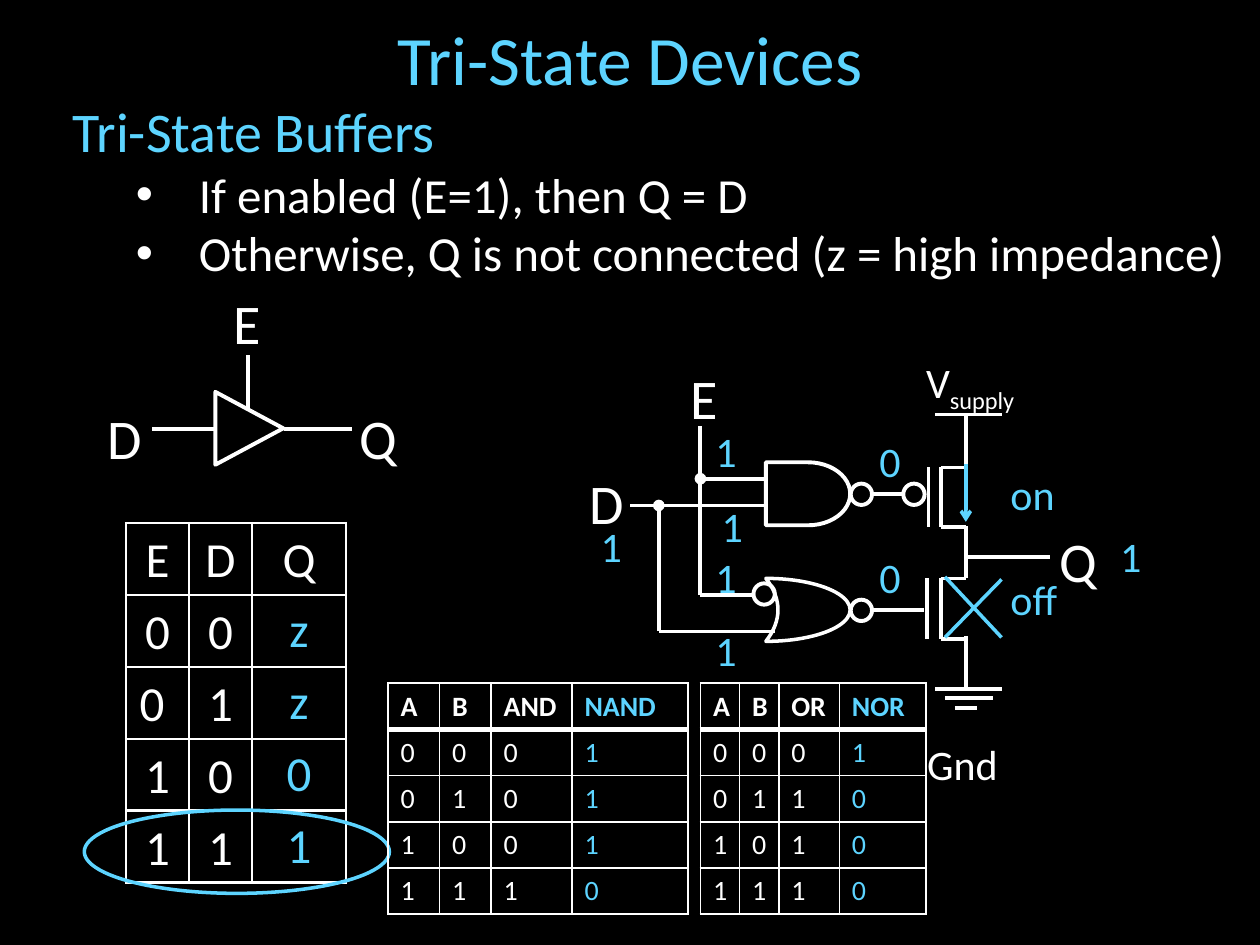
from lxml.etree import SubElement
from pptx import Presentation
from pptx.dml.color import RGBColor
from pptx.enum.shapes import MSO_CONNECTOR, MSO_SHAPE as Preset
from pptx.enum.text import MSO_ANCHOR as Anchor, MSO_AUTO_SIZE as AutoSize, PP_ALIGN as Align
from pptx.oxml.ns import qn
from pptx.util import Cm, Pt

COLORS = {"ground": "000000", "ink": "FFFFFF", "accent": "5DD4FF"}
FONT = "Calibri"
TRUNK_X, TAP_X, GATE_X, OUTPUT_X, DRAIN_X = 14.12, 13.28, 15.44, 17.15, 19.47
D_Y = 10.19


def rgb(color):
    """Look up a named colour."""
    return RGBColor.from_string(COLORS[color])


def style_text(paragraph, size, color="ink", bold=False):
    """Format every run of a paragraph."""
    for run in paragraph.runs:
        run.font.name = FONT
        run.font.size = Pt(size)
        run.font.bold = bold
        run.font.color.rgb = rgb(color)


def add_wire(slide, start, end, color="ink", weight=2.25, head=None, tail=None):
    """Draw a straight line between two points, with optional line ends."""
    points = [Cm(value) for value in (*start, *end)]
    wire = slide.shapes.add_connector(MSO_CONNECTOR.STRAIGHT, *points)
    wire.line.color.rgb = rgb(color)
    wire.line.width = Pt(weight)
    for tag, kind in (("a:headEnd", head), ("a:tailEnd", tail)):
        if kind:
            SubElement(wire.line._get_or_add_ln(), qn(tag), type=kind)
    SubElement(wire._element.spPr, qn("a:effectLst"))


def add_outline(slide, preset, box, color="ink", weight=2.25):
    """Draw an unfilled preset shape."""
    outline = slide.shapes.add_shape(preset, *(Cm(value) for value in box))
    outline.shadow.inherit = False
    outline.fill.background()
    outline.line.color.rgb = rgb(color)
    outline.line.width = Pt(weight)
    return outline


def add_label(slide, text, box, size=24, color="ink", wrap=False):
    """Place a one-line label and return its paragraph."""
    frame = slide.shapes.add_textbox(*(Cm(value) for value in box)).text_frame
    frame.word_wrap = wrap
    frame.auto_size = AutoSize.SHAPE_TO_FIT_TEXT
    frame.text = text
    style_text(frame.paragraphs[0], size, color)
    return frame.paragraphs[0]


def border_cell(cell, weights):
    """Give a cell its left, right, top and bottom borders and no fill."""
    properties = cell._tc.get_or_add_tcPr()
    for side, weight in zip("LRTB", weights):
        edge = SubElement(properties, qn(f"a:ln{side}"), w=str(int(Pt(weight))))
        fill = SubElement(edge, qn("a:solidFill"))
        SubElement(fill, qn("a:srgbClr"), val=COLORS["ink"])
    cell.fill.background()


def add_grid(slide, rows, left, top, widths, row_height):
    """Add a plain table and return its cells as (row, column, cell)."""
    table = slide.shapes.add_table(
        len(rows), len(widths), Cm(left), Cm(top),
        Cm(sum(widths)), Cm(row_height * len(rows))).table
    table.first_row = table.horz_banding = False
    for column, width in zip(table.columns, widths):
        column.width = Cm(width)
    cells = []
    for r, values in enumerate(rows):
        table.rows[r].height = Cm(row_height)
        for c, value in enumerate(values):
            cell = table.cell(r, c)
            cell.text_frame.text = value
            cells.append((r, c, cell))
    return cells


def add_buffer_table(slide):
    """Add the truth table of the tri-state buffer."""
    rows = [("E", "D", "Q"), ("0", "0", "z"), ("0 ", "1", "z"), "100", "111"]
    for r, c, cell in add_grid(slide, rows, 2.54, 10.54, (1.27, 1.27, 1.9), 1.45):
        border_cell(cell, [1.42] * 4)
        cell.vertical_anchor = Anchor.MIDDLE
        paragraph = cell.text_frame.paragraphs[0]
        paragraph.alignment = Align.CENTER
        is_result = r > 0 and c == 2
        style_text(paragraph, 28, "accent" if is_result else "ink")
        if not is_result:
            cell.margin_top = Cm(0.2)
            paragraph.line_spacing = 0.93
            paragraph.space_before = Pt(7)


def add_gate_table(slide, rows, left, widths):
    """Add the truth table of a gate and its negation."""
    for r, c, cell in add_grid(slide, rows, left, 13.77, widths, 0.93):
        border_cell(cell, (1, 1, 3 if r == 1 else 1, 3 if r == 0 else 1))
        style_text(cell.text_frame.paragraphs[0], 16,
                   "accent" if c == 3 else "ink", bold=r == 0)


def add_transistor(slide, gate_x, top, bottom):
    """Draw a transistor: gate plate, channel and the two contacts."""
    channel_x = 18.97
    for x in (gate_x, channel_x):
        add_wire(slide, (x, bottom), (x, top), weight=2)
    for y in (top, bottom):
        add_wire(slide, (channel_x, y), (DRAIN_X, y), weight=2)


def add_heading(slide):
    """Fill the title and the list below it."""
    title = slide.shapes.title
    title.left, title.top, title.width, title.height = map(Cm, (0.64, 0.43, 24.13, 1.47))
    title.text_frame.text = "Tri-State Devices"
    title.text_frame.vertical_anchor = Anchor.MIDDLE
    title.text_frame.paragraphs[0].alignment = Align.CENTER
    style_text(title.text_frame.paragraphs[0], 39.6, "accent")

    subtitle = add_label(slide, "Tri-State Buffers", (1.22, 1.83, 24.18, 4.01),
                         32, "accent", wrap=True)
    for text in ("If enabled (E=1), then Q = D",
                 "Otherwise, Q is not connected (z = high impedance)"):
        point = subtitle._parent.add_paragraph()
        point.text = text
        point.level = 1
        style_text(point, 28)
        properties = point._p.get_or_add_pPr()
        properties.set("marL", str(int(Cm(2.54))))
        properties.set("indent", str(int(Cm(-1.27))))
        SubElement(properties, qn("a:buFont"), typeface="Arial")
        SubElement(properties, qn("a:buChar"), char="•")


def add_symbol(slide):
    """Draw the buffer symbol with its three terminals."""
    add_outline(slide, Preset.ISOSCELES_TRIANGLE, (4.29, 7.95, 1.47, 1.37)).rotation = 90
    for start, end in (((4.34, 8.64), (3.07, 8.64)), ((7.09, 8.64), (5.72, 8.64)),
                       ((5, 8.23), (5, 7.16))):
        add_wire(slide, start, end)


def add_circuit(slide):
    """Draw the gates, transistors, supply and ground of the buffer."""
    add_outline(slide, Preset.FLOWCHART_DELAY, (GATE_X, 9.32, 1.7, 1.27))
    nor_gate = add_outline(slide, Preset.MOON, (GATE_X, 11.66, 1.7, 1.27), weight=2)
    nor_gate.adjustments[0] = 0.856
    nor_gate._element.spPr.xfrm.set("flipH", "1")
    for x, y in ((OUTPUT_X, 9.75), (OUTPUT_X, 12.09), (15.19, 11.76), (18.21, 9.75)):
        add_outline(slide, Preset.OVAL, (x, y, 0.43, 0.43))

    for start, end in (((TRUNK_X, 8.59), (TRUNK_X, 11.99)), ((GATE_X, D_Y), (12.7, D_Y)),
                       ((15.19, 11.99), (TRUNK_X, 11.99)), ((15.62, 12.73), (TAP_X, 12.73)),
                       ((18.62, 12.29), (17.58, 12.29)), ((18.21, 9.96), (17.58, 9.96)),
                       ((21.16, 11.23), (DRAIN_X, 11.23))):
        add_wire(slide, start, end)
    add_wire(slide, (TAP_X, D_Y), (TAP_X, 12.73), head="oval")
    add_wire(slide, (TRUNK_X, 9.65), (GATE_X, 9.65), head="oval")

    add_transistor(slide, 18.72, 9.42, 10.62)
    add_transistor(slide, 18.69, 11.66, 12.88)
    for top, bottom in ((8.38, 9.45), (10.6, 11.66), (12.83, 13.89)):
        add_wire(slide, (DRAIN_X, bottom), (DRAIN_X, top), weight=2)
    for left, right, y in ((18.85, 20.19, 8.36), (18.85, 20.19, 13.89),
                           (19.05, 20.02, 14.07), (19.25, 19.69, 14.27)):
        add_wire(slide, (left, y), (right, y), weight=2)


def add_terminal_labels(slide):
    """Name the terminals, the supply and the ground."""
    for text, x, y, width in (("E", 4.45, 5.69, 1.07), ("D", 1.91, 8, 1.22),
                              ("Q", 6.99, 8, 1.7), ("E", 13.67, 7.21, 1.07),
                              ("D", 11.63, 9.32, 1.22), ("Q", 21.11, 10.49, 1.7)):
        add_label(slide, text, (x, y, width, 1.63), 32, wrap=text == "Q")
    supply = add_label(slide, "V", (18.42, 6.88, 2.46, 1.37))
    supply.add_run().text = "supply"
    style_text(supply, 24)
    supply.runs[1].font._element.set("baseline", "-25000")
    ground = add_label(slide, "Gnd", (18.44, 14.61, 1.93, 1.37))
    supply.line_spacing = ground.line_spacing = 1.16


def add_signals(slide):
    """Mark the signal values and transistor states for E = D = 1."""
    for text, x, y, width in (("1", 14.17, 8.46, 0.94), ("1", 14.17, 11, 0.94),
                              ("1", 14.17, 12.47, 0.94), ("1", 14.3, 9.96, 0.94),
                              ("1", 11.86, 10.36, 0.94), ("1", 22.33, 10.57, 0.94),
                              ("0", 17.48, 8.66, 0.94), ("0", 17.48, 11, 0.94),
                              ("on", 20.12, 9.32, 1.42), ("off", 20.12, 11.43, 1.47)):
        add_label(slide, text, (x, y, width, 1.27), color="accent")
    add_wire(slide, (19.05, 11.63), (20.19, 12.85), "accent", 2)
    add_wire(slide, (19.05, 12.85), (20.19, 11.68), "accent", 2)
    add_wire(slide, (DRAIN_X, 9.35), (DRAIN_X, 10.52), "accent", 2, tail="arrow")


def main():
    """Build the slide and save it."""
    deck = Presentation()
    deck.slide_width, deck.slide_height = Cm(25.4), Cm(19.05)
    slide = deck.slides.add_slide(deck.slide_layouts[5])
    slide.background.fill.solid()
    slide.background.fill.fore_color.rgb = rgb("ground")
    add_heading(slide)
    add_circuit(slide)
    add_symbol(slide)
    add_buffer_table(slide)
    add_terminal_labels(slide)
    add_outline(slide, Preset.OVAL, (1.7, 16.33, 6.15, 1.68), "accent", 2)
    add_gate_table(slide, [("A", "B", "OR", "NOR"), "0001", "0110", "1010", "1110"],
                   14.12, (0.79, 0.79, 1.22, 1.75))
    add_gate_table(slide, [("A", "B", "AND", "NAND"), "0001", "0101", "1001", "1110"],
                   7.82, (1.04, 1.04, 1.63, 2.34))
    add_signals(slide)
    deck.save("out.pptx")


if __name__ == "__main__":
    main()
